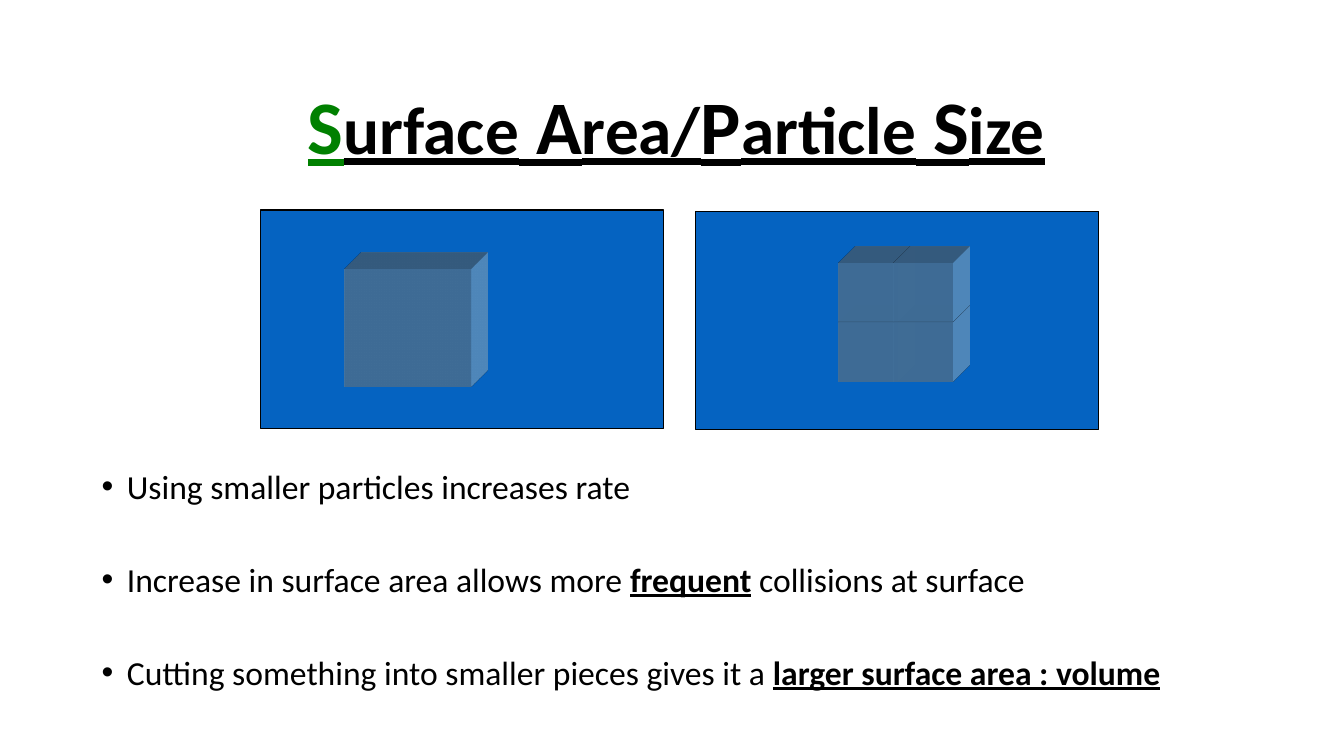
from pptx import Presentation
from pptx.dml.color import RGBColor
from pptx.enum.shapes import MSO_SHAPE
from pptx.enum.text import MSO_ANCHOR, MSO_AUTO_SIZE, PP_ALIGN
from pptx.util import Inches, Pt
from lxml.etree import SubElement
from pptx.oxml.ns import qn


def paint(fill, color):
    fill.solid()
    fill.fore_color.rgb = RGBColor.from_string(color)


def add_runs(paragraph, pieces):
    for words, color, style in pieces:
        run = paragraph.add_run()
        run.text = words
        for key, value in {"name": "Calibri", **style}.items():
            setattr(run.font, key, value)
        paint(run.font.fill, color)


deck = Presentation()
deck.slide_width, deck.slide_height = Inches(13.33), Inches(7.5)
UNIT = deck.slide_height / 90
slide = deck.slides.add_slide(deck.slide_layouts[5])

BLACK, GREEN, CUBE_BLUE = "000000", "008000", "5B9BD5"
LARGE = {"size": Pt(54), "bold": True, "underline": True}
SMALL = {**LARGE, "size": Pt(48)}
PLAIN = {"size": Pt(24), "bold": False, "underline": False}
KEY = {"size": Pt(24), "bold": True, "underline": True}

heading = slide.shapes.title
points = slide.shapes.add_textbox(0, 0, 0, 0)
for block, place, anchor in [
    (heading, (26.15, 8, 108.7, 15), MSO_ANCHOR.MIDDLE),
    (points, (10.92, 55.8, 140, 28.8), MSO_ANCHOR.TOP),
]:
    for key, share in zip(("left", "top", "width", "height"), place):
        setattr(block, key, round(share * UNIT))
    frame_format = {"word_wrap": True, "auto_size": MSO_AUTO_SIZE.NONE, "vertical_anchor": anchor}
    for key, value in frame_format.items():
        setattr(block.text_frame, key, value)

title_line = heading.text_frame.paragraphs[0]
for key, value in {"alignment": PP_ALIGN.CENTER, "line_spacing": 0.9}.items():
    setattr(title_line, key, value)
add_runs(title_line, [
    ("S", GREEN, LARGE), ("urface", BLACK, SMALL),
    (" A", BLACK, LARGE), ("rea/", BLACK, SMALL),
    ("P", BLACK, LARGE), ("article", BLACK, SMALL),
    (" S", BLACK, LARGE), ("ize", BLACK, SMALL),
])

statements = [
    [("Using smaller particles increases rate", BLACK, PLAIN)],
    [("Increase in surface area allows more ", BLACK, PLAIN),
     ("frequent", BLACK, KEY),
     (" collisions at surface", BLACK, PLAIN)],
    [("Cutting something into smaller pieces gives it a ", BLACK, PLAIN),
     ("larger surface area : volume", BLACK, KEY)],
]
for index, statement in enumerate(statements):
    body = points.text_frame
    line = body.add_paragraph() if index else body.paragraphs[0]
    spacing = {"line_spacing": 0.8, "space_before": Pt(43.3 if index else 10)}
    for key, value in spacing.items():
        setattr(line, key, value)
    properties = line._p.get_or_add_pPr()
    properties.set("marL", str(Inches(0.25)))
    properties.set("indent", str(-Inches(0.25)))
    SubElement(properties, qn("a:buFont"), typeface="Arial")
    SubElement(properties, qn("a:buChar"), char="•")
    add_runs(line, statement)

panels = [(31, 25, 48, 26), (82.8, 25.15, 48, 26)]
whole_cube = [(41, 32, 15, 14)]
cut_cubes = [(99.8 + 6.6 * column, 31.3 + 7.1 * row, 7, 7)
             for row in (1, 0) for column in (0, 1)]

for place in panels + whole_cube + cut_cubes:
    block = slide.shapes.add_shape(MSO_SHAPE.RECTANGLE, *(round(n * UNIT) for n in place))
    if place in panels:
        paint(block.fill, "0563C1")
        paint(block.line.fill, BLACK)
        block.line.width = Pt(0.75)
        block.shadow.inherit = False
        continue
    paint(block.fill, CUBE_BLUE)
    block.line.fill.background()
    block.shadow.inherit = False
    shape_properties = block._element.spPr
    scene = SubElement(shape_properties, qn("a:scene3d"))
    SubElement(scene, qn("a:camera"), prst="legacyObliqueTopRight")
    SubElement(scene, qn("a:lightRig"), rig="legacyFlat3", dir="b")
    solid = SubElement(shape_properties, qn("a:sp3d"),
                       extrusionH="430200", prstMaterial="legacyMatte")
    for bevel in ("a:bevelT", "a:bevelB"):
        SubElement(solid, qn(bevel), w="13500", h="13500", prst="angle")
    depth_color = SubElement(solid, qn("a:extrusionClr"))
    SubElement(depth_color, qn("a:srgbClr"), val=CUBE_BLUE)

deck.save("out.pptx")
